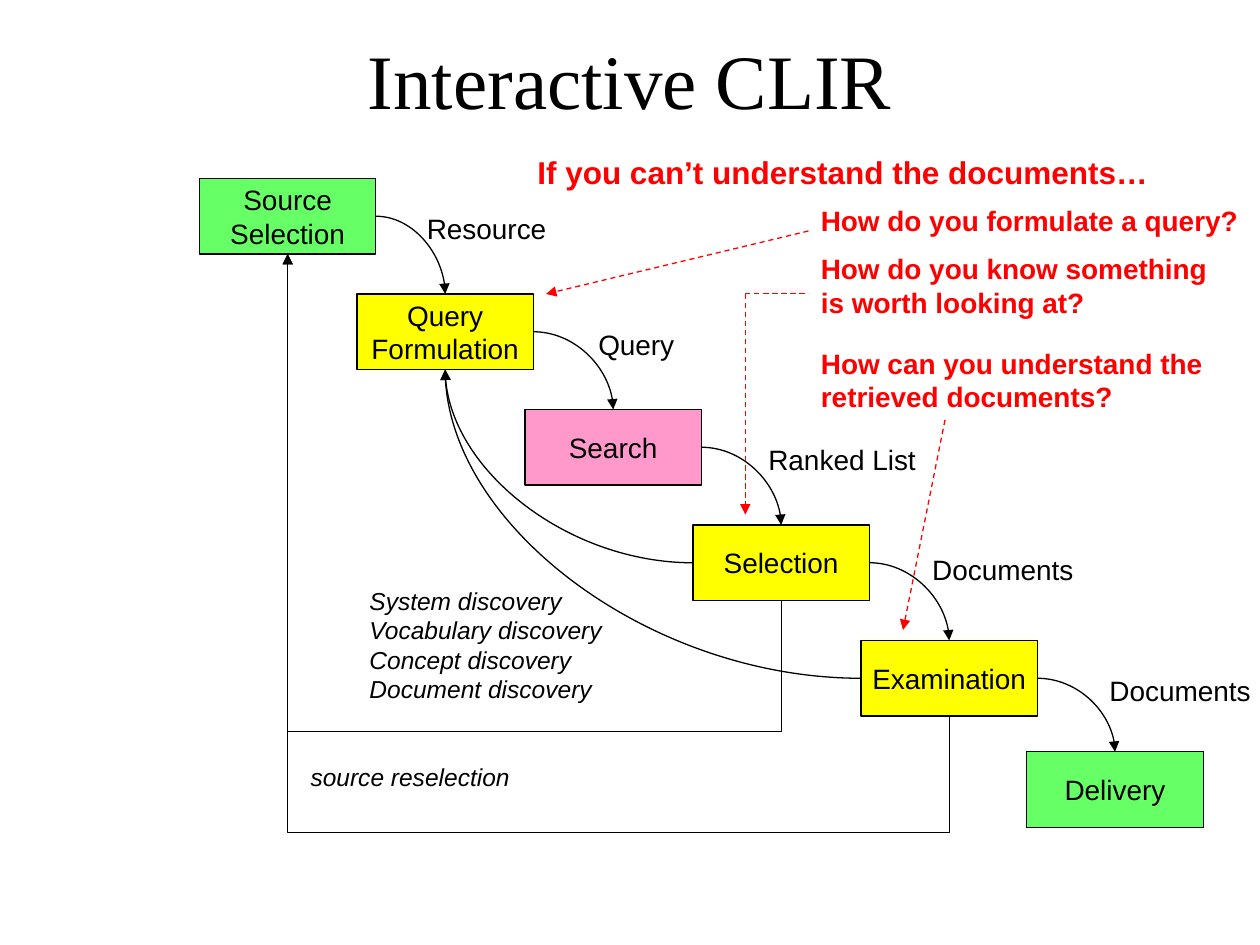
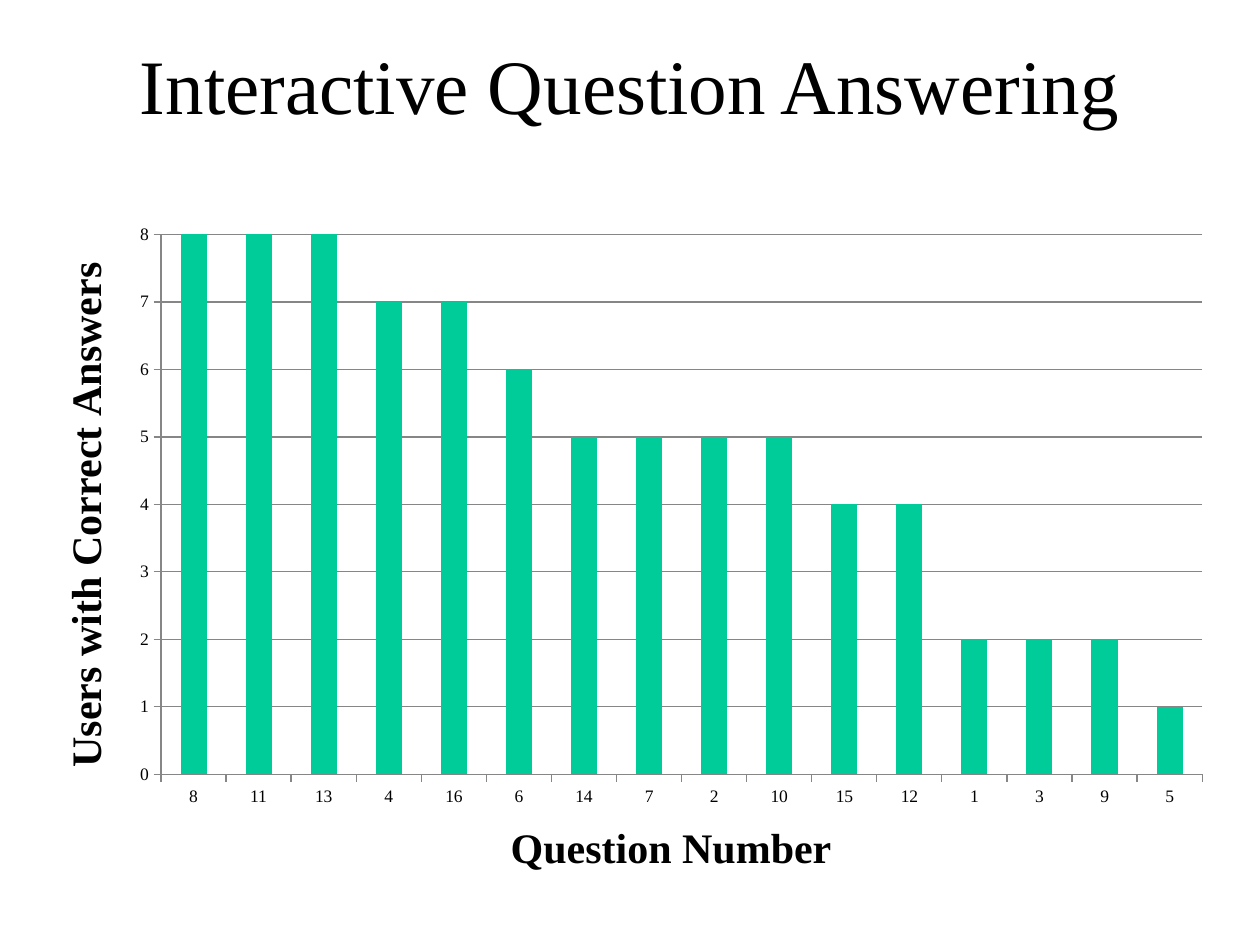
"""Build two slides on interactive cross-language retrieval."""
from dataclasses import dataclass

from lxml.etree import SubElement
from pptx import Presentation
from pptx.chart.data import CategoryChartData
from pptx.dml.color import RGBColor
from pptx.enum.chart import XL_CHART_TYPE, XL_TICK_MARK
from pptx.enum.dml import MSO_LINE
from pptx.enum.shapes import MSO_CONNECTOR, MSO_SHAPE
from pptx.enum.text import MSO_ANCHOR, MSO_AUTO_SIZE, PP_ALIGN
from pptx.oxml import parse_xml
from pptx.oxml.ns import nsdecls, qn
from pptx.util import Pt

TOP, LEFT, BOTTOM, RIGHT = range(4)
CHART_FRAME = 19.5, 121, 681, 394.5


@dataclass(frozen=True)
class Theme:
    """Colours, fonts and sizes in points."""
    black: str = "000000"
    red: str = "FF0000"
    green: str = "66FF66"
    yellow: str = "FFFF00"
    pink: str = "FF99CC"
    teal: str = "00CC99"
    gray: str = "868686"
    serif: str = "Times New Roman"
    sans: str = "Arial"
    title: float = 44
    axis_title: float = 24
    heading: float = 18
    body: float = 16
    note: float = 14
    tick: float = 10
    stroke: float = 0.75


THEME = Theme()


def style_font(font, size, color=THEME.black, name=THEME.sans, bold=False, italic=False):
    """Apply a complete font format."""
    font.size, font.name, font.bold, font.italic = Pt(size), name, bold, italic
    font.color.rgb = RGBColor.from_string(color)


def write_text(frame, text, align=PP_ALIGN.LEFT, **font_format):
    """Write one paragraph per line of text."""
    for index, line in enumerate(text.split("\n")):
        para = frame.add_paragraph() if index else frame.paragraphs[0]
        para.alignment = align
        span = para.add_run()
        span.text = line
        style_font(span.font, **font_format)


def place_in_chart(element, index, left, top, width=None, height=None):
    """Fix a chart part at a place given in points on the slide."""
    for layout in element.findall(qn("c:layout")):
        element.remove(layout)
    layout = parse_xml(f"<c:layout {nsdecls('c')}><c:manualLayout/></c:layout>")
    manual = layout[0]
    if width:
        SubElement(manual, qn("c:layoutTarget"), val="inner")
    for axis in "xy":
        SubElement(manual, qn(f"c:{axis}Mode"), val="edge")
    frame_left, frame_top, frame_width, frame_height = CHART_FRAME
    SubElement(manual, qn("c:x"), val=str((left - frame_left) / frame_width))
    SubElement(manual, qn("c:y"), val=str((top - frame_top) / frame_height))
    if width:
        SubElement(manual, qn("c:w"), val=str(width / frame_width))
        SubElement(manual, qn("c:h"), val=str(height / frame_height))
    element.insert(index, layout)


class SlideWriter:
    """Hold the theme and the current slide, and add elements to it."""

    def __init__(self, deck, theme):
        self.deck, self.theme, self.page = deck, theme, None

    def new_page(self, title, top=0):
        """Start a title-only slide."""
        self.page = self.deck.slides.add_slide(self.deck.slide_layouts[5])
        box = self.page.shapes.title
        box.left, box.top, box.width, box.height = Pt(54), Pt(top), Pt(612), Pt(90)
        box.text_frame.vertical_anchor = MSO_ANCHOR.MIDDLE
        write_text(box.text_frame, title, PP_ALIGN.CENTER,
                   size=self.theme.title, name=self.theme.serif)

    def stage(self, text, left, top, color):
        """Add a filled process box."""
        box = self.page.shapes.add_shape(
            MSO_SHAPE.RECTANGLE, Pt(left), Pt(top), Pt(100.8), Pt(43.2))
        box.shadow.inherit = False
        box.fill.solid()
        box.fill.fore_color.rgb = RGBColor.from_string(color)
        box.line.color.rgb = RGBColor.from_string(self.theme.black)
        box.line.width = Pt(self.theme.stroke)
        box.text_frame.word_wrap = False
        box.text_frame.vertical_anchor = MSO_ANCHOR.MIDDLE
        write_text(box.text_frame, text, PP_ALIGN.CENTER, size=self.theme.body)
        return box

    def label(self, text, left, top, width, height=26.6, wrap=False, **font_format):
        """Add free text."""
        box = self.page.shapes.add_textbox(Pt(left), Pt(top), Pt(width), Pt(height))
        box.text_frame.word_wrap = wrap
        box.text_frame.auto_size = MSO_AUTO_SIZE.SHAPE_TO_FIT_TEXT
        write_text(box.text_frame, text, **font_format)

    def connector(self, kind, start, end, color, arrow=True, dashed=False):
        """Add a connector, with an arrowhead at its end if wanted."""
        link = self.page.shapes.add_connector(kind, *map(Pt, start + end))
        link.line.color.rgb = RGBColor.from_string(color)
        link.line.width = Pt(self.theme.stroke)
        if dashed:
            link.line.dash_style = MSO_LINE.DASH
        properties = link.element.spPr
        if arrow:
            SubElement(properties.find(qn("a:ln")), qn("a:tailEnd"), type="triangle")
        SubElement(properties, qn("a:effectLst"))
        return link

    def curve(self, source, source_side, target, target_side):
        """Join two boxes with a quarter curve."""
        link = self.connector(MSO_CONNECTOR.CURVE, (0, 0), (0, 0), self.theme.black)
        link.begin_connect(source, source_side)
        link.end_connect(target, target_side)
        link.element.spPr.find(qn("a:prstGeom")).set("prst", "curvedConnector2")

    def return_path(self, source, target, lane):
        """Run from the bottom of a box along a lane and up to an earlier box."""
        start_x, end_x = ((box.left + box.width / 2) / Pt(1) for box in (source, target))
        start_y, end_y = ((box.top + box.height) / Pt(1) for box in (source, target))
        rise, run = start_y - end_y, start_x - end_x
        middle_x, middle_y = (start_x + end_x) / 2, (start_y + end_y) / 2
        link = self.connector(
            MSO_CONNECTOR.ELBOW, (middle_x - rise / 2, middle_y + run / 2),
            (middle_x + rise / 2, middle_y - run / 2), self.theme.black)
        properties = link.element.spPr
        properties.find(qn("a:xfrm")).set("rot", str(270 * 60000))
        guides = properties.find(qn("a:prstGeom")).get_or_add_avLst()
        bend = round((start_y - lane) / rise * 100000)
        SubElement(guides, qn("a:gd"), name="adj1", fmla=f"val {bend}")

    def column_chart(self, categories, values, category_title, value_title):
        """Add a single-series column chart with titled axes."""
        theme = self.theme
        data = CategoryChartData()
        data.categories = categories
        data.add_series("Series 1", values)
        chart = self.page.shapes.add_chart(
            XL_CHART_TYPE.COLUMN_CLUSTERED, *map(Pt, CHART_FRAME), data).chart
        chart.has_legend = chart.has_title = False
        style_font(chart.font, theme.tick, name=theme.serif)
        plot = chart.plots[0]
        plot.gap_width, plot.vary_by_categories = 150, False
        fill = plot.series[0].format.fill
        fill.solid()
        fill.fore_color.rgb = RGBColor.from_string(theme.teal)
        scale = chart.value_axis
        for axis, title, left, top in ((chart.category_axis, category_title, 287.5, 464.5),
                                       (scale, value_title, 28.8, 145.7)):
            axis.major_tick_mark = XL_TICK_MARK.OUTSIDE
            axis.format.line.color.rgb = RGBColor.from_string(theme.gray)
            write_text(axis.axis_title.text_frame, title, PP_ALIGN.CENTER,
                       size=theme.axis_title, name=theme.serif, bold=True)
            place_in_chart(axis.axis_title.element, 1, left, top)
        scale.minimum_scale, scale.maximum_scale, scale.major_unit = 0, 8, 1
        scale.has_major_gridlines = True
        scale.major_gridlines.format.line.color.rgb = RGBColor.from_string(theme.gray)
        body = scale.axis_title.element.find(".//" + qn("a:bodyPr"))
        body.set("rot", str(-90 * 60000))
        body.set("vert", "horz")
        plot_area = chart.element.find(".//" + qn("c:plotArea"))
        place_in_chart(plot_area, 0, 92, 134, 595, 308.5)


def build_process(writer):
    """Draw the search process, its feedback loops and the open questions."""
    theme = writer.theme
    writer.new_page("Interactive CLIR")
    stages = [writer.stage(*stage) for stage in (
        ("Source\nSelection", 114, 102, theme.green),
        ("Query\nFormulation", 204, 168, theme.yellow),
        ("Search", 300, 234, theme.pink),
        ("Selection", 396, 300, theme.yellow),
        ("Examination", 492, 366, theme.yellow),
        ("Delivery", 586.8, 429.6, theme.green))]
    for source, target in zip(stages, stages[1:]):
        writer.curve(source, RIGHT, target, TOP)
    for text, left, top, width in (
            ("Resource", 236.8, 117.5, 83), ("Query", 334.8, 183.5, 58.5),
            ("Ranked List", 432, 249.5, 98.6), ("Documents", 525.6, 312, 95),
            ("Documents", 626.9, 381.5, 95)):
        writer.label(text, left, top, width, size=theme.body)

    source_box, query_box, _, selection_box, examination_box, _ = stages
    for box, lane in ((examination_box, 475.8), (selection_box, 418)):
        writer.return_path(box, source_box, lane)
        writer.curve(box, LEFT, query_box, BOTTOM)
    writer.label("source reselection", 170.4, 432, 165.6, 24,
                 wrap=True, size=theme.note, italic=True)
    writer.label("System discovery\nVocabulary discovery\nConcept discovery\nDocument discovery",
                 204, 331.2, 147.6, 74.2, size=theme.note, italic=True)

    writer.label("If you can’t understand the documents…", 300, 84, 363.6, 29,
                 size=theme.heading, color=theme.red, bold=True)
    for text, top, width, height in (
            ("How do you formulate a query?", 113, 258, 26.6),
            ("How do you know something is worth looking at?", 140.4, 252, 46),
            ("How can you understand the retrieved documents?", 194.4, 234, 46)):
        writer.label(text, 462, top, width, height, wrap=True,
                     size=theme.body, color=theme.red, bold=True)
    for start, end, arrow in (
            ((425.9, 167.9), (425.9, 294), True), ((425.9, 167.9), (462, 167.9), False),
            ((462, 132), (312, 168), True), ((540, 240), (516, 360), True)):
        writer.connector(MSO_CONNECTOR.STRAIGHT, start, end, theme.red, arrow, dashed=True)


def build_results(writer):
    """Chart the correct answers for each question."""
    writer.new_page("Interactive Question Answering", top=3)
    writer.column_chart(
        "8 11 13 4 16 6 14 7 2 10 15 12 1 3 9 5".split(),
        (8, 8, 8, 7, 7, 6, 5, 5, 5, 5, 4, 4, 2, 2, 2, 1),
        "Question Number", "Users with Correct Answers")


def main():
    """Build and save the deck."""
    deck = Presentation()
    deck.slide_width, deck.slide_height = Pt(720), Pt(540)
    writer = SlideWriter(deck, THEME)
    build_process(writer)
    build_results(writer)
    deck.save("out.pptx")


if __name__ == "__main__":
    main()
